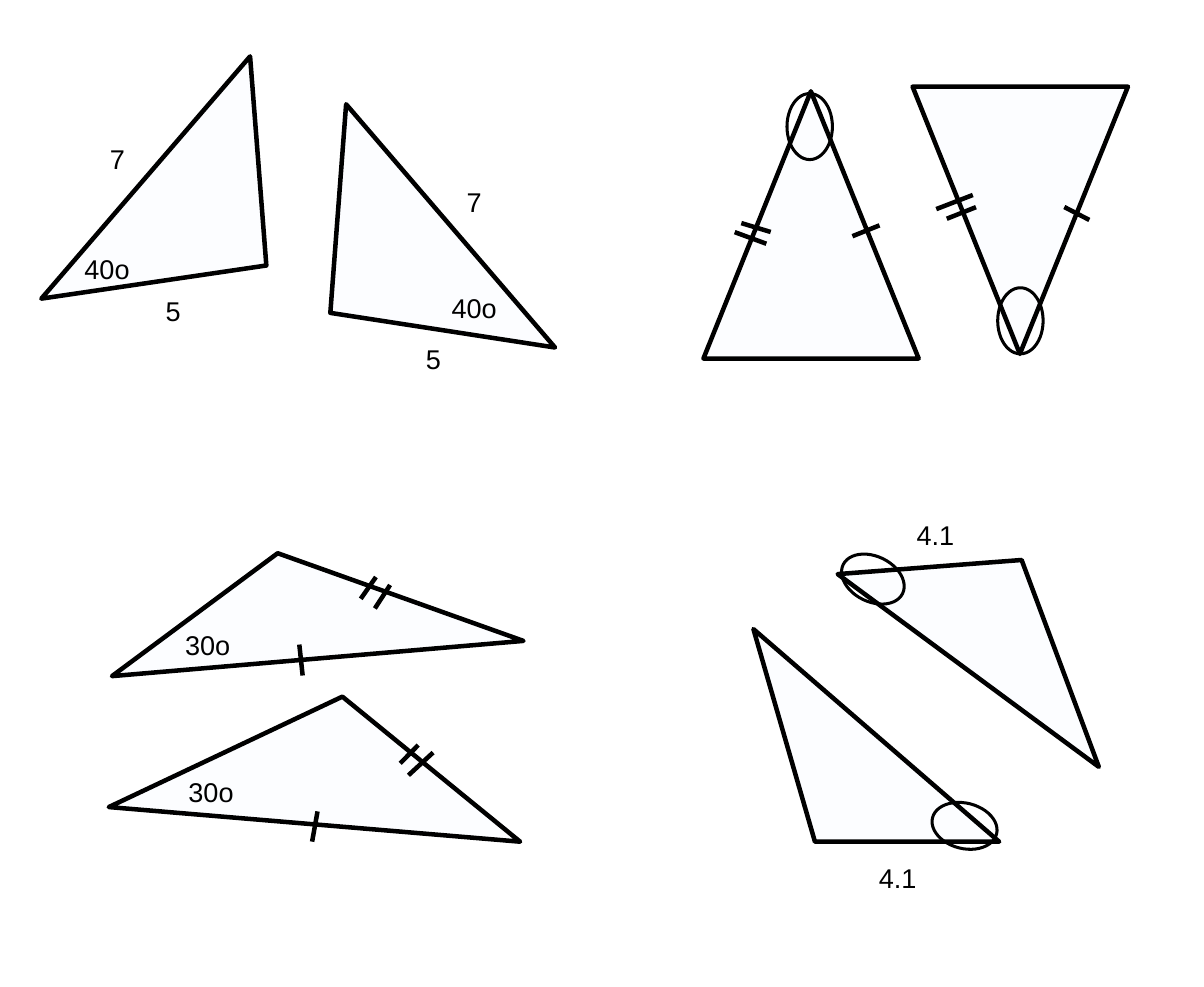
from pptx import Presentation
from pptx import util as u
from pptx.dml.color import RGBColor
from pptx.enum import shapes, text
from pptx.oxml.ns import qn
from lxml import etree

BLACK = RGBColor(0x00, 0x00, 0x00)
PALE = RGBColor(0xFC, 0xFD, 0xFF)
Pt = u.Pt


class Sketch:
    """Draws triangle pairs on one slide, each pair in its own group."""
    font, size = "Arial", 18
    thick, thin = 3, 2
    oval = (30.2, 43.9)

    def __init__(self, slide):
        self.slide = slide
        self.pair = None

    def start(self):
        """Opens the group that the next elements go into."""
        self.pair = self.slide.shapes.add_group_shape().shapes

    def stroke(self, shape, width):
        shape.line.color.rgb = BLACK
        shape.line.width = Pt(width)

    def side(self, *points):
        """Draws a closed triangle through three corners."""
        first, *rest = [(Pt(x), Pt(y)) for x, y in points]
        path = self.pair.build_freeform(*first)
        path.add_line_segments(rest, close=True)
        shape = path.convert_to_shape()
        shape.shadow.inherit = False
        shape.fill.solid()
        shape.fill.fore_color.rgb = PALE
        self.stroke(shape, self.thick)

    def tick(self, x1, y1, x2, y2):
        """Draws a short mark across a side of equal length."""
        line = self.pair.add_connector(
            shapes.MSO_CONNECTOR.STRAIGHT, Pt(x1), Pt(y1), Pt(x2), Pt(y2))
        self.stroke(line, self.thick)
        etree.SubElement(line._element.spPr, qn("a:effectLst"))

    def ring(self, x, y, turn=0):
        """Circles an angle, centred on x, y."""
        wide, high = self.oval
        shape = self.pair.add_shape(
            shapes.MSO_SHAPE.OVAL, Pt(x - wide / 2), Pt(y - high / 2),
            Pt(wide), Pt(high))
        shape.rotation = turn
        shape.shadow.inherit = False
        shape.fill.background()
        self.stroke(shape, self.thin)

    def label(self, words, x, y):
        box = self.pair.add_textbox(
            Pt(x), Pt(y), Pt(16 + 10 * len(words)), Pt(28.8))
        frame = box.text_frame
        frame.word_wrap = True
        frame.auto_size = text.MSO_AUTO_SIZE.SHAPE_TO_FIT_TEXT
        run = frame.paragraphs[0].add_run()
        run.text = words
        run.font.name = self.font
        run.font.size = Pt(self.size)
        run.font.color.rgb = BLACK


# Top left, bottom left, top right, bottom right
PAIRS = [
    {
        "side": [
            [(177, 176.5), (27.5, 198.5), (166.2, 37.5)],
            [(219.5, 208), (368.8, 231), (230, 69.3)],
        ],
        "label": [
            ("5", 103, 192.2), ("7", 66, 91.1),
            ("5", 275.8, 223.9), ("7", 303, 119.9),
            ("40o", 49, 164.2), ("40o", 293, 190.1),
        ],
    },
    {
        "side": [
            [(72.3, 536.4), (227.5, 463), (345.6, 559.4)],
            [(347.8, 426), (184.5, 367.7), (74.4, 449.4)],
        ],
        "tick": [
            (211, 539.3, 207.4, 559.4), (198.9, 428.4, 201.1, 449),
            (239.7, 398, 249.8, 383.5), (249.1, 404.4, 259.2, 388.8),
            (265.9, 507.4, 277.9, 495.2), (271.4, 515.3, 287.8, 500.2),
        ],
        "label": [("30o", 115.9, 414), ("30o", 118.1, 511.9)],
    },
    {
        "side": [
            [(677.7, 235.2), (749.5, 57.6), (606.4, 57.6)],
            [(538.8, 60.7), (610.4, 238.3), (467.4, 238.3)],
        ],
        "ring": [(678, 213.2), (538, 84.1)],
        "tick": [
            (566.4, 157, 584.4, 149.8), (707.2, 137.6, 723.8, 146.2),
            (622.1, 139, 646.4, 129.6), (629.1, 145.4, 648.5, 137.7),
            (492.6, 148.3, 512.1, 154.2), (488.2, 154.3, 509.2, 162),
        ],
    },
    {
        "side": [
            [(500.6, 418.1), (663.9, 559.4), (541.5, 559.4)],
            [(730.1, 509.7), (556.6, 381.6), (678.8, 372.2)],
        ],
        "ring": [(640.9, 548.9, 284.2), (580, 384.9, 115.9)],
        "label": [("4.1", 576.9, 568.8), ("4.1", 601.9, 341.3)],
    },
]


def main():
    deck = Presentation()
    deck.slide_width, deck.slide_height = Pt(800), Pt(656)
    blank = deck.slide_layouts[6]
    sketch = Sketch(deck.slides.add_slide(blank))
    draw = {"side": sketch.side, "ring": sketch.ring,
            "tick": sketch.tick, "label": sketch.label}
    for parts in PAIRS:
        sketch.start()
        for kind, items in parts.items():
            for item in items:
                draw[kind](*item)
    deck.save("out.pptx")


if __name__ == "__main__":
    main()
